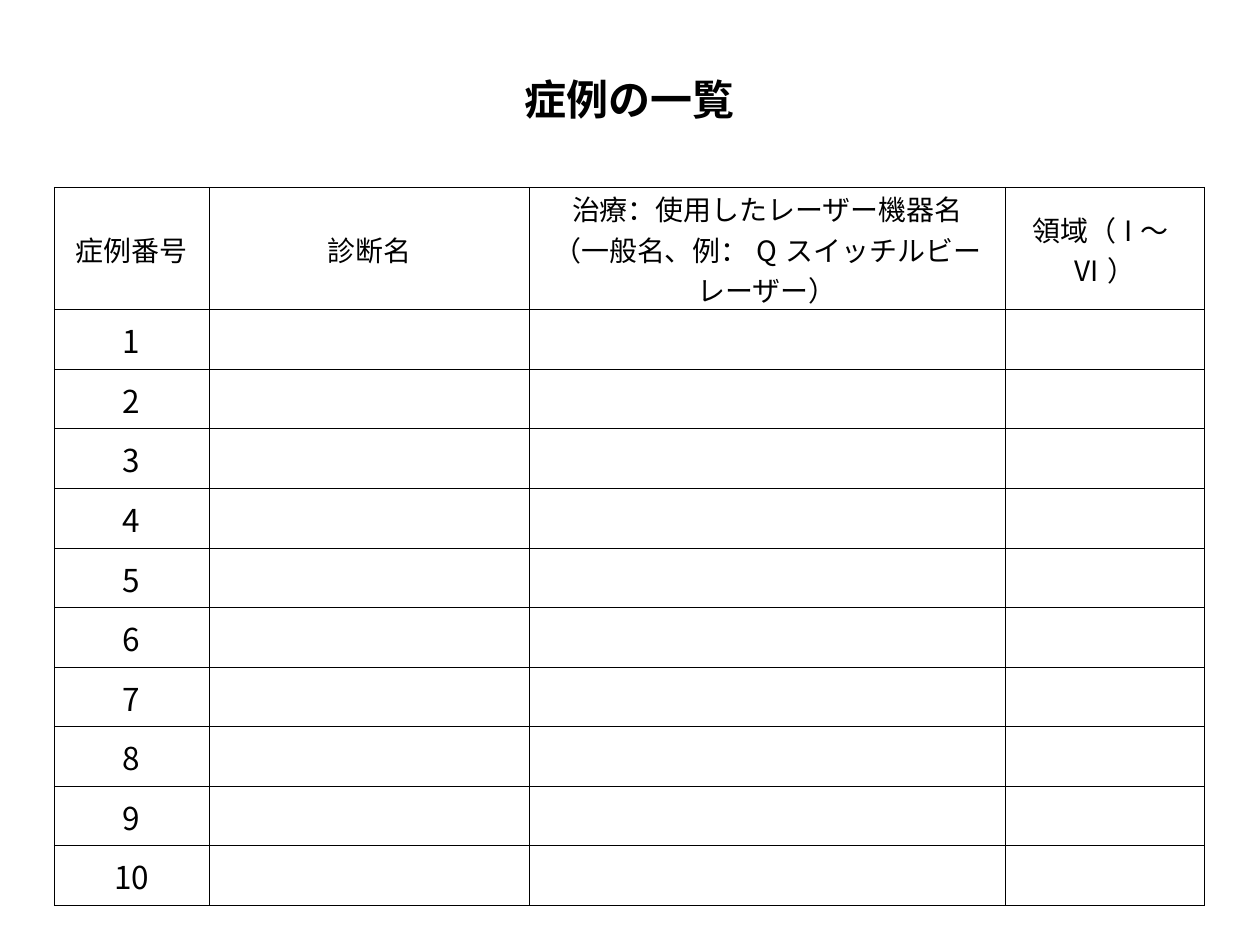
from dataclasses import dataclass

from lxml.etree import SubElement
from pptx import Presentation
from pptx.dml.color import RGBColor
from pptx.enum.text import MSO_ANCHOR, PP_ALIGN
from pptx.oxml.ns import qn
from pptx.table import Table, _Cell
from pptx.util import Inches, Pt


@dataclass(frozen=True)
class Theme:
    font: str = "Noto Sans CJK JP"
    ink: str = "000000"
    paper: str = "FFFFFF"
    title_size: int = 24
    header_size: int = 16
    number_size: int = 18
    border_width: float = 0.5


@dataclass(frozen=True)
class Column:
    heading: str
    width: float


THEME = Theme()
TITLE = "症例の一覧"
COLUMNS = (
    Column("症例番号", 1.23),
    Column("診断名", 2.54),
    Column("治療：使用したレーザー機器名\n（一般名、例：Qスイッチルビーレーザー）", 3.78),
    Column("領域（I〜VI）", 1.58),
)
CASE_COUNT = 10
TITLE_ROW, SPACER_ROW, HEADER_ROW = range(3)
FIRST_CASE_ROW = HEADER_ROW + 1
ROW_COUNT = FIRST_CASE_ROW + CASE_COUNT
LEFT, TOP, HEIGHT = 0.43, 0.52, 6.15
NO_STYLE_NO_GRID = "{2D5ABB26-0587-4C30-8999-92F81FD0307C}"


def write(cell: _Cell, text: str, size: int, bold: bool = False) -> None:
    cell.text_frame.text = text
    for paragraph in cell.text_frame.paragraphs:
        paragraph.alignment = PP_ALIGN.CENTER
        for run in paragraph.runs:
            run.font.size = Pt(size)
            run.font.bold = bold
            run.font.name = THEME.font
            run.font.color.rgb = RGBColor.from_string(THEME.ink)
            east_asian = SubElement(run.font._element, qn("a:ea"))
            east_asian.set("typeface", THEME.font)


def draw_borders(cell: _Cell, sides: str) -> None:
    """Draw the named sides (L, R, T, B); must run before the cell's fill is set."""
    properties = cell._tc.get_or_add_tcPr()
    for side in sides:
        border = SubElement(properties, qn(f"a:ln{side}"), w=str(Pt(THEME.border_width)))
        fill = SubElement(border, qn("a:solidFill"))
        SubElement(fill, qn("a:srgbClr"), val=THEME.ink)


def format_cell(cell: _Cell, sides: str) -> None:
    cell.vertical_anchor = MSO_ANCHOR.MIDDLE
    cell.margin_left = cell.margin_right = cell.margin_top = Inches(0.01)
    cell.margin_bottom = 0
    draw_borders(cell, sides)
    cell.fill.background()


def format_grid(table: Table) -> None:
    table.first_row = table.horz_banding = False
    table._tbl.tblPr.find(qn("a:tableStyleId")).text = NO_STYLE_NO_GRID
    for column, spec in zip(table.columns, COLUMNS):
        column.width = Inches(spec.width)
    sides_above_header = {TITLE_ROW: "", SPACER_ROW: "B"}
    for index, row in enumerate(table.rows):
        row.height = Inches(HEIGHT / ROW_COUNT)
        for cell in row.cells:
            format_cell(cell, sides_above_header.get(index, "LRTB"))


def main() -> None:
    presentation = Presentation()
    presentation.slide_width, presentation.slide_height = Inches(10), Inches(7.5)
    slide = presentation.slides.add_slide(presentation.slide_layouts[6])
    slide.background.fill.solid()
    slide.background.fill.fore_color.rgb = RGBColor.from_string(THEME.paper)

    total_width = sum(column.width for column in COLUMNS)
    cases = slide.shapes.add_table(
        ROW_COUNT, len(COLUMNS), Inches(LEFT), Inches(TOP), Inches(total_width), Inches(HEIGHT)
    ).table
    format_grid(cases)

    title_cell = cases.cell(TITLE_ROW, 0)
    title_cell.merge(cases.cell(TITLE_ROW, len(COLUMNS) - 1))
    write(title_cell, TITLE, THEME.title_size, bold=True)
    for index, column in enumerate(COLUMNS):
        write(cases.cell(HEADER_ROW, index), column.heading, THEME.header_size)
    for case in range(CASE_COUNT):
        write(cases.cell(FIRST_CASE_ROW + case, 0), str(case + 1), THEME.number_size)

    presentation.save("out.pptx")


if __name__ == "__main__":
    main()
